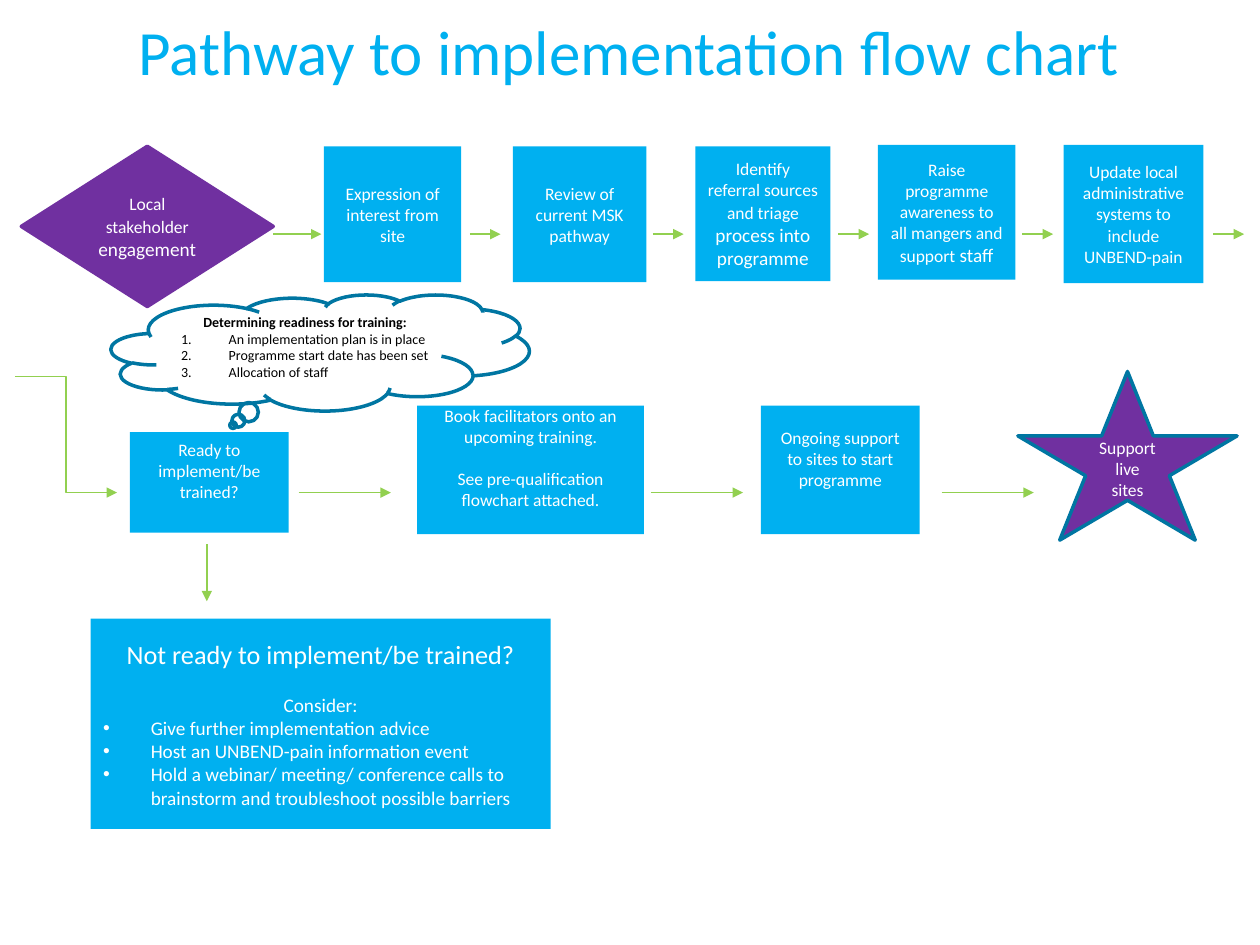
import pptx
import pptx.dml.color
import pptx.enum.shapes
import pptx.enum.text
import pptx.oxml.ns
import pptx.util
from lxml import etree

Cm = pptx.util.Cm
Pt = pptx.util.Pt
RGB = pptx.dml.color.RGBColor
SHAPE = pptx.enum.shapes.MSO_SHAPE
LINK = pptx.enum.shapes.MSO_CONNECTOR
ALIGN = pptx.enum.text.PP_ALIGN
ANCHOR = pptx.enum.text.MSO_ANCHOR
qn = pptx.oxml.ns.qn

BLUE = RGB(0x00, 0xB0, 0xF0)
DARK_BLUE = RGB(0x00, 0x76, 0xA2)
PURPLE = RGB(0x70, 0x30, 0xA0)
GREEN = RGB(0x92, 0xD0, 0x50)
WHITE = RGB(0xFF, 0xFF, 0xFF)
BLACK = RGB(0x00, 0x00, 0x00)
FONT = "Calibri"

# Content: each paragraph is a dict; "more" is a larger ending of the same line
TITLE = "Pathway to implementation flow chart"


def line(text, size=10, **options):
    return dict(text=text, size=size, **options)


# Plain boxes: paragraphs, (left, top, width, height), (top inset, bottom inset)
EVEN = (0.13, 0.13)
RAISED = (0.13, 0.6)
BOXES = [
    ([line("Expression of interest from site")], (6.53, 2.95, 2.77, 2.74), EVEN),
    ([line("Review of current MSK pathway")], (10.34, 2.95, 2.69, 2.74), EVEN),
    ([line("Identify referral sources and triage", more=" process into programme")],
     (14.02, 2.95, 2.72, 2.72), EVEN),
    ([line("Raise programme awareness to all mangers and support", more=" staff")],
     (17.7, 2.92, 2.77, 2.72), EVEN),
    ([line("Update local administrative systems to include UNBEND-pain")],
     (21.44, 2.92, 2.82, 2.79), EVEN),
    ([line("Ready to implement/be trained?")], (2.62, 8.71, 3.2, 2.03), RAISED),
    ([line("Book facilitators onto an upcoming training."),
      line("See pre-qualification flowchart attached.", before=12.2)],
     (8.41, 8.18, 4.57, 2.59), (0, 0.5)),
    ([line("Ongoing support to sites to start programme")],
     (15.34, 8.18, 3.2, 2.59), RAISED),
    ([line("Not ready to implement/be trained?", 15),
      line("Consider:", 11, before=13.4),
      line("Give further implementation advice", 11, mark="bullet"),
      line("Host an UNBEND-pain information event", 11, mark="bullet"),
      line("Hold a webinar/ meeting/ conference calls to brainstorm and "
           "troubleshoot possible barriers", 11, mark="bullet")],
     (1.83, 12.47, 9.27, 4.24), EVEN),
]

START = [line("Local stakeholder", more=" engagement")]
FINISH = [line("Support live sites")]
READINESS = [
    line("Determining readiness for training:", 8, bold=True),
    line("An implementation plan is in place", 8, mark="number"),
    line("Programme start date has been set", 8, mark="number"),
    line("Allocation of staff", 8, mark="number"),
]

# Arrows: left ends along each row
TOP_ROW_Y, LOWER_ROW_Y = 4.72, 9.93
SHORT, LONG = 0.62, 1.86
SHORT_STARTS = [9.47, 13.16, 16.9, 20.61, 24.46]
LONG_STARTS = [6.02, 13.12, 18.98]
ARROWS = [
    (LINK.STRAIGHT, 5.51, TOP_ROW_Y, 6.48, TOP_ROW_Y),
    (LINK.ELBOW, 0.3, 7.59, 2.36, LOWER_ROW_Y),
    (LINK.STRAIGHT, 4.17, 10.97, 4.17, 12.12),
]
for starts, length, y in ((SHORT_STARTS, SHORT, TOP_ROW_Y),
                          (LONG_STARTS, LONG, LOWER_ROW_Y)):
    ARROWS += [(LINK.STRAIGHT, x, y, x + length, y) for x in starts]


def set_mark(para, kind):
    """Give a paragraph a hanging bullet or number."""
    properties = para._p.get_or_add_pPr()
    properties.set("marL", str(Cm(0.96)))
    properties.set("indent", str(-Cm(0.96)))
    if kind == "bullet":
        etree.SubElement(properties, qn("a:buFont"), typeface="Arial")
        etree.SubElement(properties, qn("a:buChar"), char="•")
    else:
        etree.SubElement(properties, qn("a:buAutoNum"), type="arabicPeriod")


def write(frame, lines, color):
    for index, item in enumerate(lines):
        para = frame.paragraphs[0] if index == 0 else frame.add_paragraph()
        mark = item.get("mark")
        para.alignment = ALIGN.LEFT if mark else ALIGN.CENTER
        if "before" in item:
            para.space_before = Pt(item["before"])
        if mark:
            set_mark(para, mark)
        para.font.name = FONT
        para.font.size = Pt(item["size"])
        para.font.bold = item.get("bold", False)
        para.font.color.rgb = color
        para.add_run().text = item["text"]
        if "more" in item:
            span = para.add_run()
            span.text = item["more"]
            span.font.size = Pt(11)


def add_shape(page, kind, place, lines, fill=None, outline=None, color=WHITE, insets=EVEN):
    shape = page.shapes.add_shape(kind, *map(Cm, place))
    shape.shadow.inherit = False
    if fill is None:
        shape.fill.background()
    else:
        shape.fill.solid()
        shape.fill.fore_color.rgb = fill
    if outline is None:
        shape.line.fill.background()
    else:
        shape.line.color.rgb = outline
        shape.line.width = Pt(2)
        etree.SubElement(shape._element.spPr.find(qn("a:ln")), qn("a:round"))
    frame = shape.text_frame
    frame.word_wrap = True
    frame.vertical_anchor = ANCHOR.MIDDLE
    frame.margin_top, frame.margin_bottom = map(Cm, insets)
    write(frame, lines, color)


def add_arrow(page, kind, *ends):
    arrow = page.shapes.add_connector(kind, *map(Cm, ends))
    arrow.line.color.rgb = GREEN
    arrow.line.width = Pt(0.75)
    properties = arrow._element.spPr
    etree.SubElement(properties.find(qn("a:ln")), qn("a:tailEnd"), type="triangle")
    etree.SubElement(properties, qn("a:effectLst"))


def main():
    deck = pptx.Presentation()
    deck.slide_width, deck.slide_height = Cm(25.4), Cm(19.05)
    page = deck.slides.add_slide(deck.slide_layouts[5])

    # Title
    title = page.shapes.title
    title.left, title.top, title.width, title.height = map(Cm, (2.54, 0.13, 22.15, 1.8))
    frame = title.text_frame
    frame.auto_size = pptx.enum.text.MSO_AUTO_SIZE.NONE
    frame.vertical_anchor = ANCHOR.TOP
    write(frame, [line(TITLE, 36)], BLUE)
    frame.paragraphs[0].alignment = ALIGN.LEFT

    # Steps, start and finish
    for lines, place, insets in BOXES:
        add_shape(page, SHAPE.RECTANGLE, place, lines, BLUE, insets=insets)
    add_shape(page, SHAPE.DIAMOND, (0.43, 2.95, 5.08, 3.23), START, PURPLE, PURPLE)
    add_shape(page, SHAPE.STAR_5_POINT, (20.52, 7.49, 4.42, 3.4), FINISH, PURPLE, DARK_BLUE)

    # Arrows
    for arrow in ARROWS:
        add_arrow(page, *arrow)

    # Readiness checklist
    add_shape(page, SHAPE.CLOUD_CALLOUT, (2.24, 5.94, 8.43, 2.34), READINESS,
              outline=DARK_BLUE, color=BLACK, insets=(0, 0.12))

    deck.save("out.pptx")


if __name__ == "__main__":
    main()
